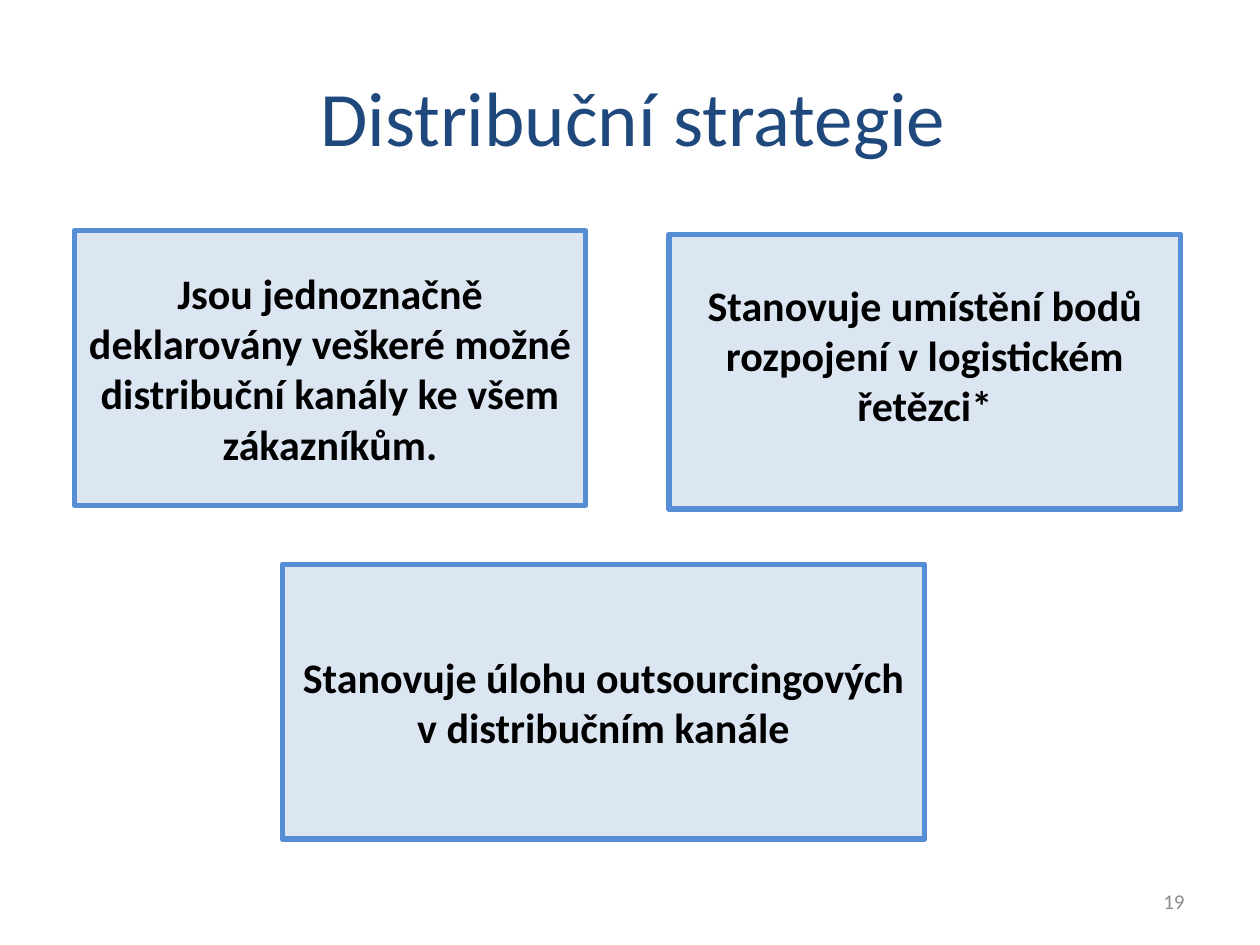
from pptx import Presentation
from pptx import util as u
from pptx.dml import color
from pptx.enum import shapes, text

COLORS = {
    "title": "1F497D",
    "number": "8C8C8C",
    "body": "000000",
    "fill": "DCE6F2",
    "border": "558ED5",
}
BOX_HEIGHT = 2.18
TOP_WIDTH = 4.06


def rgb(name):
    return color.RGBColor.from_string(COLORS[name])


def inches(box):
    return [u.Inches(length) for length in box]


def write(frame, wording, size, color_name, align, bold=False):
    frame.word_wrap = True
    frame.vertical_anchor = text.MSO_ANCHOR.MIDDLE
    paragraph = frame.paragraphs[0]
    paragraph.alignment = align
    run = paragraph.add_run()
    run.text = wording
    run.font.name = "Calibri"
    run.font.size = u.Pt(size)
    run.font.bold = bold
    run.font.color.rgb = rgb(color_name)


def add_title(slide, box, wording):
    title = slide.shapes.add_textbox(*inches(box))
    write(title.text_frame, wording, 44, "title", text.PP_ALIGN.CENTER)


def add_page_number(slide, box, number):
    page_number = slide.shapes.add_textbox(*inches(box))
    write(page_number.text_frame, number, 12, "number", text.PP_ALIGN.RIGHT)


def add_statement(slide, box, wording, bottom_inset=0.05):
    """Add a bordered panel; a larger bottom inset lifts its centred text."""
    panel = slide.shapes.add_shape(shapes.MSO_SHAPE.RECTANGLE, *inches(box))
    panel.shadow.inherit = False
    panel.fill.solid()
    panel.fill.fore_color.rgb = rgb("fill")
    panel.line.color.rgb = rgb("border")
    panel.line.width = u.Pt(3)
    panel.text_frame.margin_bottom = u.Inches(bottom_inset)
    write(panel.text_frame, wording, 24, "body", text.PP_ALIGN.CENTER, bold=True)


def main():
    deck = Presentation()
    deck.slide_width, deck.slide_height = u.Inches(10), u.Inches(7.5)
    slide = deck.slides.add_slide(deck.slide_layouts[6])

    add_page_number(slide, (7.17, 6.95, 2.33, 0.4), "19")
    add_title(slide, (0.83, 0.4, 8.39, 1.03), "Distribuční strategie")
    add_statement(slide, (5.31, 1.86, TOP_WIDTH, BOX_HEIGHT),
                  "Stanovuje umístění bodů rozpojení v logistickém řetězci*",
                  bottom_inset=0.32)
    add_statement(slide, (0.59, 1.83, TOP_WIDTH, BOX_HEIGHT),
                  "Jsou jednoznačně deklarovány veškeré možné "
                  "distribuční kanály ke všem zákazníkům.")
    add_statement(slide, (2.24, 4.48, 5.1, BOX_HEIGHT),
                  "Stanovuje úlohu outsourcingových v distribučním kanále")

    deck.save("out.pptx")


if __name__ == "__main__":
    main()
